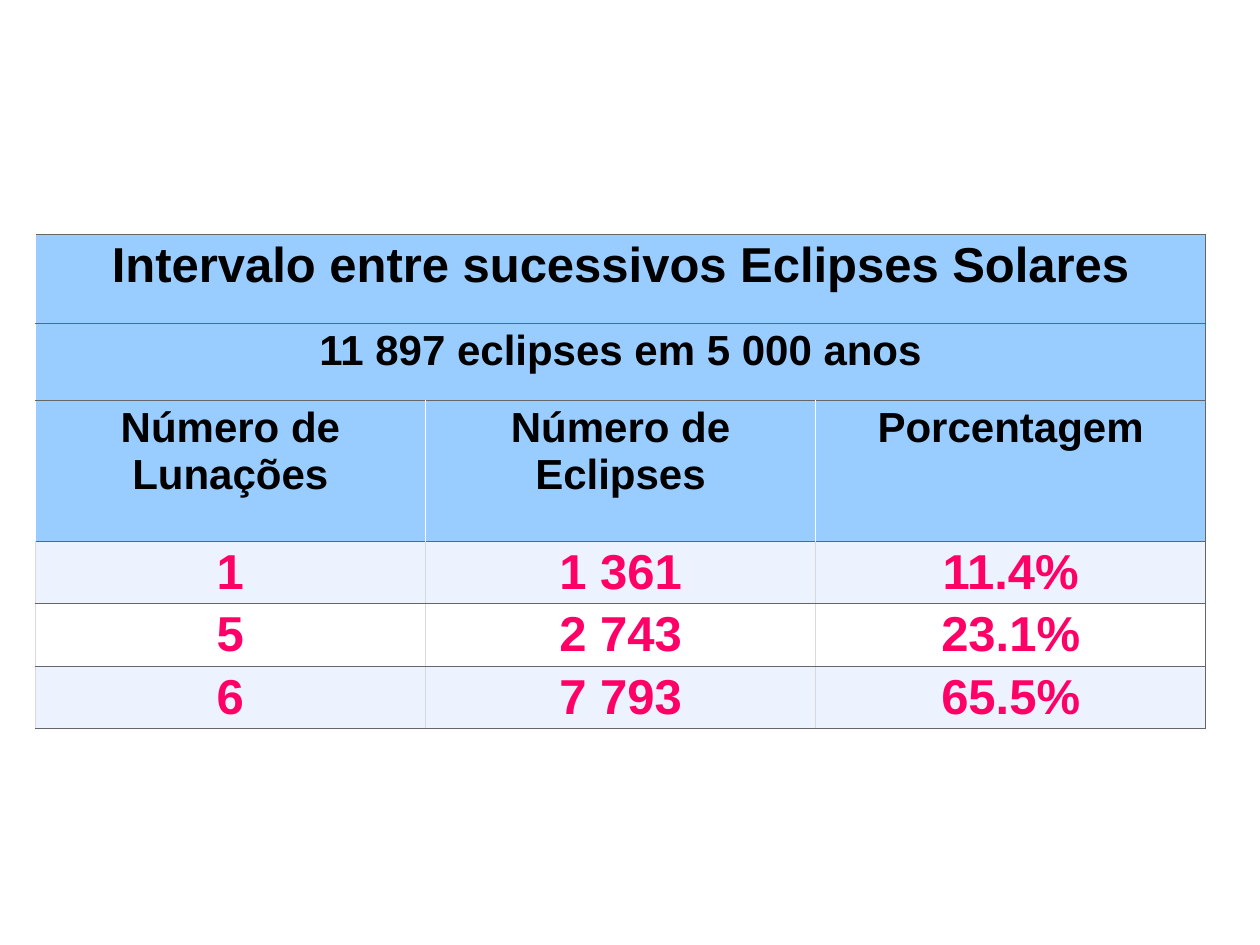
from lxml import etree
from pptx import Presentation
from pptx import util as u
from pptx.dml.color import RGBColor
from pptx.enum import text
from pptx.oxml.ns import qn

COLORS = {
    "header": "99CCFF", "band": "EDF3FE", "plain": "FFFFFF",
    "ink": "000000", "value": "FF0066",
    "rule": "666666", "header_gap": "FFFFFF", "body_gap": "D9D9D9",
}
STYLES = {
    "title": {"size": 28, "ink": "ink", "gap": "header_gap"},
    "head": {"size": 24, "ink": "ink", "gap": "header_gap"},
    "body": {"size": 28, "ink": "value", "gap": "body_gap"},
}
# Height, style, fill and texts of each row; a single text spans the row
ROWS = [
    (0.71, "title", "header", ["Intervalo entre sucessivos Eclipses Solares"]),
    (0.61, "head", "header", ["11 897 eclipses em 5 000 anos"]),
    (1.12, "head", "header",
     ["Número de Lunações", "Número de Eclipses", "Porcentagem"]),
    (0.39, "body", "band", ["1", "1 361", "11.4%"]),
    (0.39, "body", "plain", ["5", "2 743", "23.1%"]),
    (0.39, "body", "band", ["6", "7 793", "65.5%"]),
]
COLUMNS = 3
MARGINS = {"margin_left": 0.08, "margin_right": 0.08,
           "margin_top": 0.03, "margin_bottom": 0.03}


def rgb(name):
    return RGBColor.from_string(COLORS[name])


def set_borders(cell, left, right):
    """Draw the four sides; top and bottom always use the rule colour."""
    tcPr = cell._tc.get_or_add_tcPr()
    sides = {"lnL": left, "lnR": right, "lnT": "rule", "lnB": "rule"}
    for i, (tag, color) in enumerate(sides.items()):
        ln = etree.Element(qn(f"a:{tag}"), w=str(u.Pt(0.75)))
        fill = etree.SubElement(ln, qn("a:solidFill"))
        etree.SubElement(fill, qn("a:srgbClr"), val=COLORS[color])
        tcPr.insert(i, ln)


def write_cell(cell, words, style):
    p = cell.text_frame.paragraphs[0]
    p.alignment = text.PP_ALIGN.CENTER
    r = p.add_run()
    r.text = words
    font = {"name": "Arial", "size": u.Pt(style["size"]), "bold": True}
    for name, value in font.items():
        setattr(r.font, name, value)
    r.font.color.rgb = rgb(style["ink"])


def add_eclipse_table(s, left, top, width, height):
    frame = s.shapes.add_table(len(ROWS), COLUMNS, left, top, width, height)
    table = frame.table
    for i, (row_height, style_name, fill, texts) in enumerate(ROWS):
        style = STYLES[style_name]
        table.rows[i].height = u.Inches(row_height)
        if len(texts) == 1:
            table.cell(i, 0).merge(table.cell(i, COLUMNS - 1))
        for j in range(COLUMNS):
            cell = table.cell(i, j)
            cell.fill.solid()
            cell.fill.fore_color.rgb = rgb(fill)
            for name, value in MARGINS.items():
                setattr(cell, name, u.Inches(value))
            at_edge = j == COLUMNS - 1 or cell.is_merge_origin
            set_borders(cell, style["gap"], "rule" if at_edge else style["gap"])
            if j < len(texts):
                write_cell(cell, texts[j], style)
    frame.height = height


def main():
    prs = Presentation()
    prs.slide_width, prs.slide_height = u.Inches(10), u.Inches(7.5)
    s = prs.slides.add_slide(prs.slide_layouts[6])
    add_eclipse_table(s, u.Inches(0.28), u.Inches(1.86),
                      u.Inches(9.29), u.Inches(4.03))
    prs.save("out.pptx")


if __name__ == "__main__":
    main()
